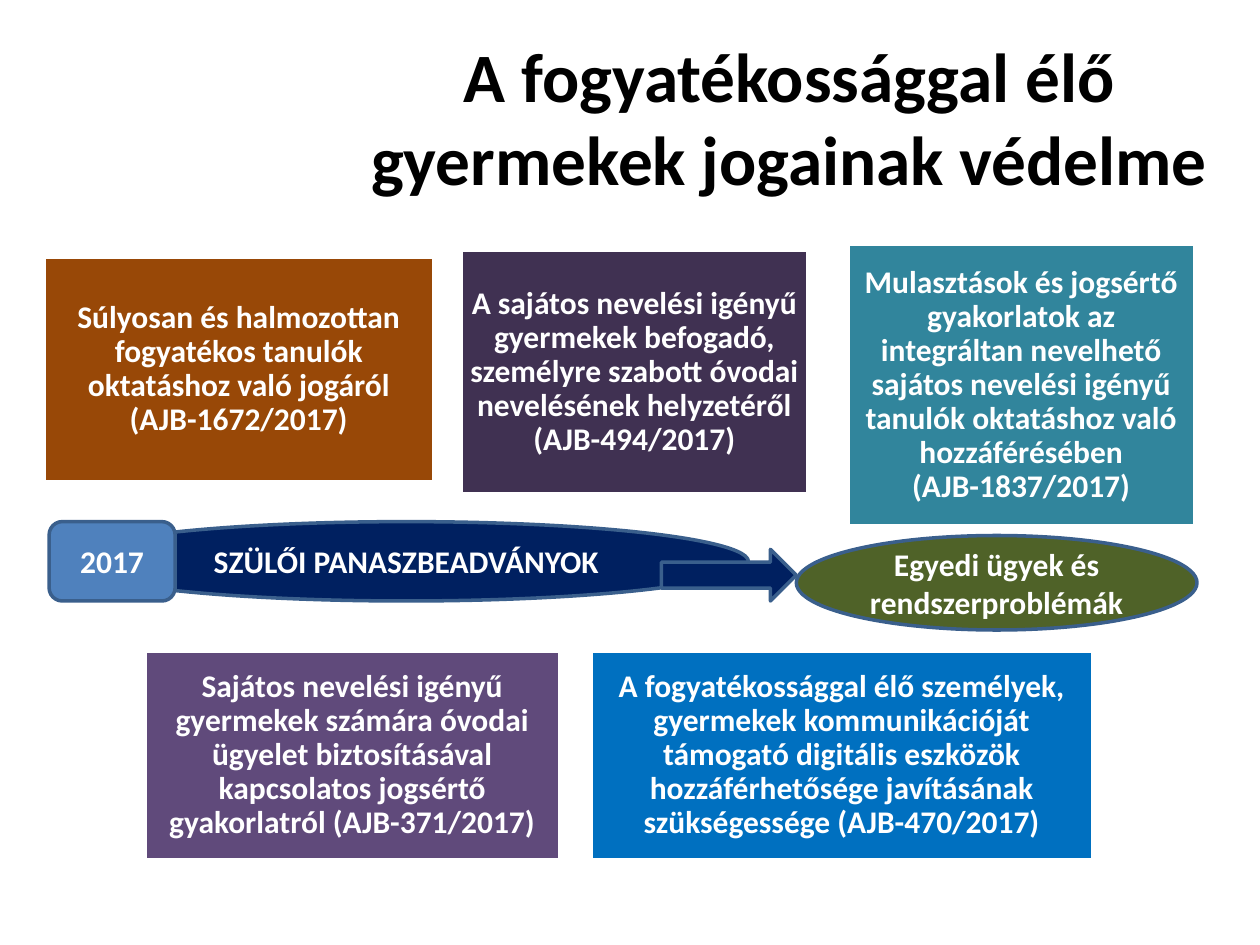
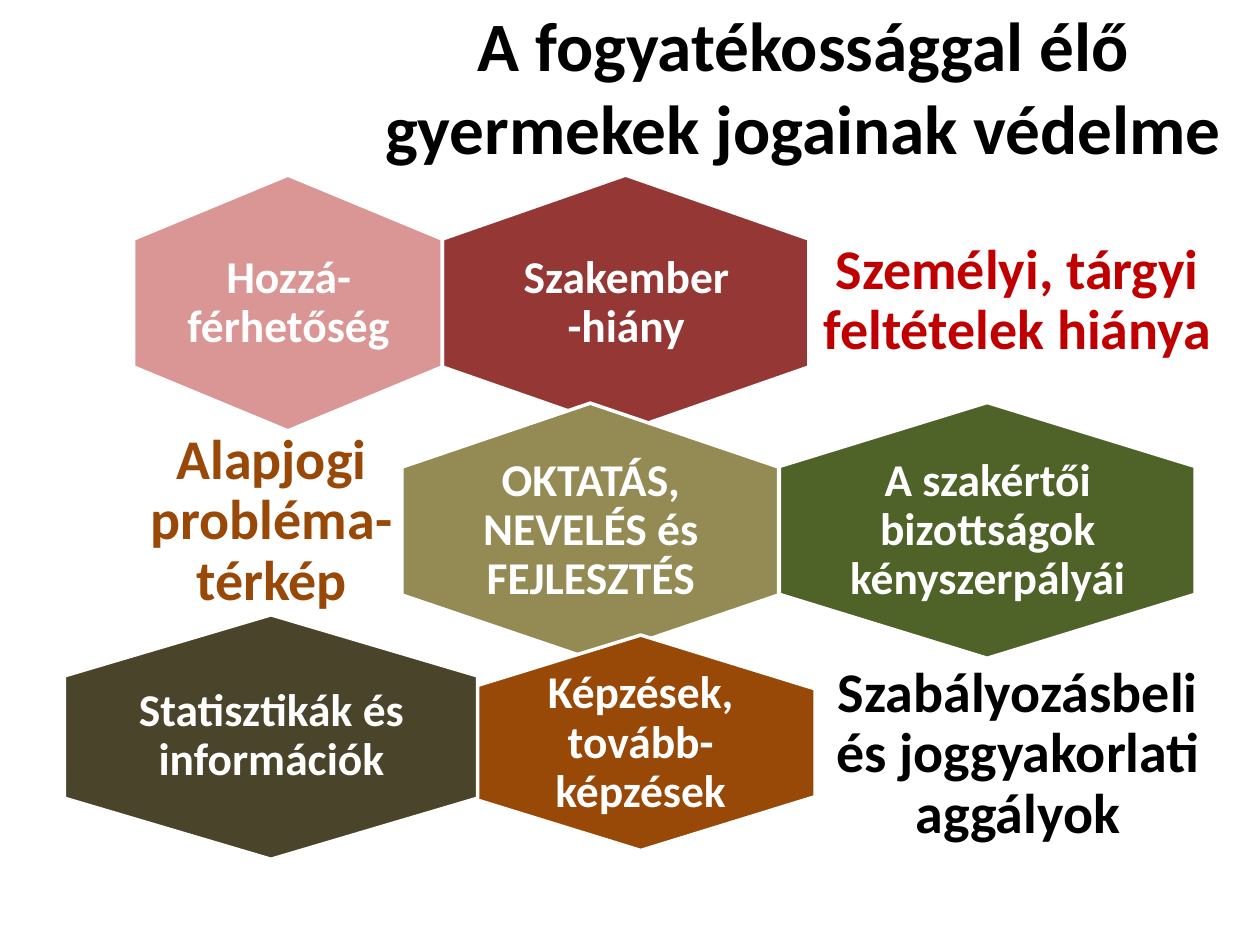
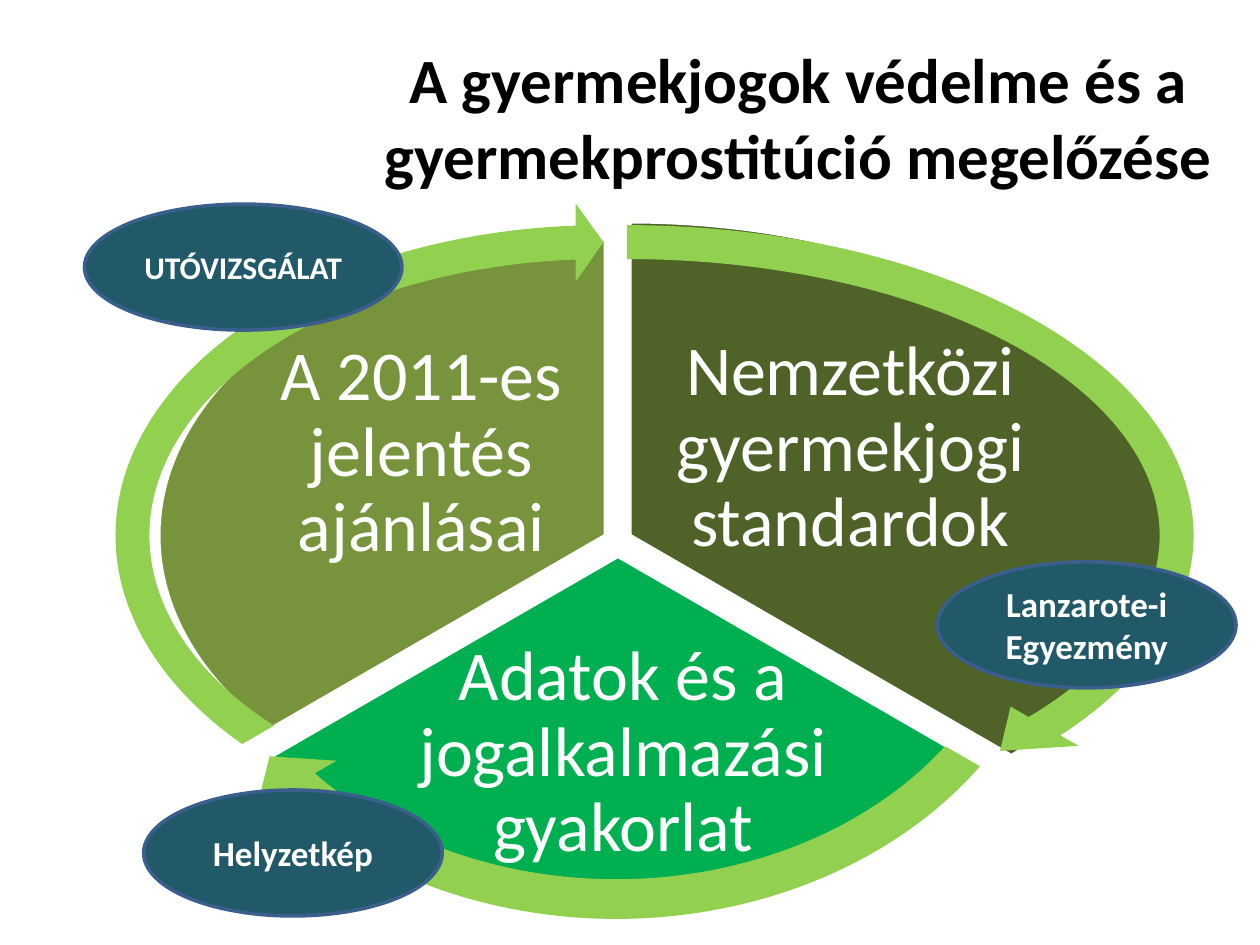
from dataclasses import dataclass
from typing import Optional

from pptx import Presentation
from pptx.dml.color import RGBColor
from pptx.enum.shapes import MSO_SHAPE as Preset
from pptx.enum.text import MSO_ANCHOR as Anchor, PP_ALIGN as Align
from pptx.util import Inches, Pt

FONT = "Calibri"
WHITE = "FFFFFF"
BLACK = "000000"
OUTLINE = "3A5F8C"
NAVY = "002060"
OLIVE = "4F6228"
BROWN = "984807"
TEAL = "215968"
LIME = "92D050"
DEFAULT_INSETS = (0.1, 0.05)
CARD_INSETS = (0.07, 0.07)
HEXAGON_INSETS = (0.11, 0.11)
NO_INSETS = (0, 0)
CAPTION_INSETS = (0.13, 0.13)
SECTOR_INSETS = (0.06, 0.06)


@dataclass(frozen=True)
class Box:
    left: float
    top: float
    width: float
    height: float


@dataclass(frozen=True)
class Label:
    text: str
    size: float = 18
    color: str = WHITE
    bold: bool = True
    insets: tuple[float, float] = DEFAULT_INSETS
    spacing: float = 1.0


@dataclass(frozen=True)
class Figure:
    preset: Preset
    box: Box
    fill: str
    line: Optional[str] = WHITE
    label: Optional[Label] = None
    adjustments: tuple[float, ...] = ()
    rotation: float = 0


@dataclass(frozen=True)
class Caption:
    box: Box
    label: Label


def rgb(color: str) -> RGBColor:
    return RGBColor.from_string(color)


def place(box: Box) -> tuple:
    return Inches(box.left), Inches(box.top), Inches(box.width), Inches(box.height)


def write(text_frame, label: Label) -> None:
    text_frame.word_wrap = True
    text_frame.vertical_anchor = Anchor.MIDDLE
    horizontal, vertical = label.insets
    text_frame.margin_left = text_frame.margin_right = Inches(horizontal)
    text_frame.margin_top = text_frame.margin_bottom = Inches(vertical)
    text_frame.text = label.text
    for paragraph in text_frame.paragraphs:
        paragraph.alignment = Align.CENTER
        paragraph.line_spacing = label.spacing
        for run in paragraph.runs:
            run.font.name = FONT
            run.font.size = Pt(label.size)
            run.font.bold = label.bold
            run.font.color.rgb = rgb(label.color)


def draw_caption(slide, caption: Caption) -> None:
    write(slide.shapes.add_textbox(*place(caption.box)).text_frame, caption.label)


def draw_figure(slide, figure: Figure) -> None:
    shape = slide.shapes.add_shape(figure.preset, *place(figure.box))
    shape.shadow.inherit = False
    shape.rotation = figure.rotation
    shape.fill.solid()
    shape.fill.fore_color.rgb = rgb(figure.fill)
    if figure.line:
        shape.line.color.rgb = rgb(figure.line)
        shape.line.width = Pt(2)
    else:
        shape.line.fill.background()
    for index, value in enumerate(figure.adjustments):
        shape.adjustments[index] = value
    if figure.label:
        write(shape.text_frame, figure.label)


def title(box: Box, text: str, size: float) -> Caption:
    return Caption(box, Label(text, size, BLACK))


def card(box: Box, fill: str, text: str) -> Figure:
    return Figure(Preset.RECTANGLE, box, fill,
                  label=Label(text, insets=CARD_INSETS, spacing=0.9))


def ellipse(box: Box, fill: str, text: str, size: float = 18) -> Figure:
    return Figure(Preset.OVAL, box, fill, OUTLINE, Label(text, size))


def hexagon(box: Box, fill: str) -> Figure:
    return Figure(Preset.HEXAGON, box, fill, rotation=90)


def hexagon_text(box: Box, text: str, insets: tuple[float, float]) -> Caption:
    return Caption(box, Label(text, 26, insets=insets, spacing=0.9))


def side_text(box: Box, text: str, color: str) -> Caption:
    return Caption(box, Label(text, 32, color, insets=CAPTION_INSETS, spacing=0.9))


def sector(box: Box, fill: str, start: float, end: float) -> Figure:
    return Figure(Preset.PIE, box, fill, adjustments=(start, end))


def sector_text(box: Box, text: str) -> Caption:
    return Caption(box, Label(text, 40, bold=False, insets=SECTOR_INSETS, spacing=0.9))


def cycle_arrow(box: Box, end: float, start: float) -> Figure:
    return Figure(Preset.CIRCULAR_ARROW, box, LIME, None,
                  adjustments=(0.051, 3.275, end, start, 0.059))


DISABILITY_TITLE = "A fogyatékossággal élő gyermekek jogainak védelme"

COMPLAINTS = [
    title(Box(2.8, 0.3, 6.93, 1.25), DISABILITY_TITLE, 39.6),
    card(Box(0.35, 2.04, 3.09, 1.78), BROWN,
         "Súlyosan és halmozottan fogyatékos tanulók oktatáshoz való jogáról "
         "(AJB-1672/2017)"),
    card(Box(3.66, 1.99, 2.75, 1.93), "403152",
         "A sajátos nevelési igényű gyermekek befogadó, személyre szabott óvodai "
         "nevelésének helyzetéről (AJB-494/2017)"),
    card(Box(6.73, 1.94, 2.75, 2.23), "31859C",
         "Mulasztások és jogsértő gyakorlatok az integráltan nevelhető sajátos "
         "nevelési igényű tanulók oktatáshoz való hozzáférésében (AJB-1837/2017)"),
    card(Box(1.15, 5.17, 3.29, 1.65), "604A7B",
         "Sajátos nevelési igényű gyermekek számára óvodai ügyelet biztosításával "
         "kapcsolatos jogsértő gyakorlatról (AJB-371/2017)"),
    card(Box(4.69, 5.17, 3.98, 1.65), "0070C0",
         "A fogyatékossággal élő személyek, gyermekek kommunikációját támogató "
         "digitális eszközök hozzáférhetősége javításának szükségessége "
         "(AJB-470/2017)"),
    ellipse(Box(0.51, 4.14, 5.43, 0.63), NAVY, "SZÜLŐI PANASZBEADVÁNYOK"),
    Figure(Preset.RIGHT_ARROW, Box(5.25, 4.36, 1.07, 0.41), NAVY, OUTLINE),
    ellipse(Box(6.32, 4.25, 3.18, 0.75), OLIVE, "Egyedi ügyek és rendszerproblémák"),
    Figure(Preset.ROUNDED_RECTANGLE, Box(0.39, 4.14, 1, 0.63), "4F81BD", OUTLINE,
           Label("2017")),
]

PROBLEM_MAP = [
    title(Box(2.87, 0.13, 7.01, 1.1), DISABILITY_TITLE, 39.6),
    hexagon(Box(3.95, 0.95, 2.03, 2.91), "953735"),
    hexagon_text(Box(4, 1.73, 1.94, 1.35), "Szakember-hiány", HEXAGON_INSETS),
    side_text(Box(6.35, 1.78, 3.45, 1.22), "Személyi, tárgyi feltételek hiánya", "C00000"),
    hexagon(Box(1.27, 1.18, 2.03, 2.45), "D99694"),
    hexagon_text(Box(1.47, 1.73, 1.64, 1.35), "Hozzá-férhetőség", NO_INSETS),
    hexagon(Box(3.67, 2.72, 2.03, 2.99), "948A54"),
    hexagon_text(Box(3.69, 3.54, 2, 1.35), "OKTATÁS, NEVELÉS és FEJLESZTÉS", HEXAGON_INSETS),
    side_text(Box(1.06, 3.28, 2.19, 1.72), "Alapjogi probléma-térkép", BROWN),
    hexagon(Box(6.82, 2.56, 2.03, 3.3), OLIVE),
    hexagon_text(Box(6.74, 3.54, 2.2, 1.35), "A szakértői bizottságok kényszerpályái",
                 NO_INSETS),
    hexagon(Box(4.23, 4.51, 1.71, 2.77), BROWN),
    hexagon_text(Box(4.16, 5.33, 1.85, 1.14), "Képzések, tovább-képzések", HEXAGON_INSETS),
    side_text(Box(6.43, 5.17, 3.3, 1.64), "Szabályozásbeli és joggyakorlati aggályok", BLACK),
    hexagon(Box(1.18, 4.21, 1.94, 3.28), "4A452A"),
    hexagon_text(Box(1.06, 5.2, 2.19, 1.29), "Statisztikák és információk", NO_INSETS),
]

PREVENTION_CYCLE = [
    title(Box(2.87, 0.3, 6.93, 1.25),
          "A gyermekjogok védelme és a gyermekprostitúció megelőzése", 36),
    sector(Box(0.75, 1.76, 8.5, 4.98), OLIVE, 162, 18),
    sector_text(Box(5.23, 2.82, 3.04, 1.48), "Nemzetközi gyermekjogi standardok"),
    sector(Box(1.5, 1.62, 6.81, 5.59), "00B050", 18, 90),
    sector_text(Box(3.12, 5.25, 3.65, 1.46), "Adatok és a jogalkalmazási gyakorlat"),
    sector(Box(1.26, 1.9, 7.09, 4.7), "77933C", 90, 162),
    sector_text(Box(2.08, 2.9, 2.53, 1.4), "A 2011-es jelentés ajánlásai"),
    cycle_arrow(Box(0.3, 1.61, 9.35, 5.28), 14.725, 162),
    cycle_arrow(Box(1.14, 1.33, 7.5, 6.17), 86.72, 18),
    cycle_arrow(Box(0.74, 1.61, 8.1, 5.28), 158.73, 90),
    ellipse(Box(0.67, 1.62, 2.52, 1), TEAL, "UTÓVIZSGÁLAT"),
    ellipse(Box(7.44, 4.46, 2.37, 1), TEAL, "Lanzarote-i Egyezmény", 20),
    ellipse(Box(1.14, 6.27, 2.37, 1), TEAL, "Helyzetkép", 20),
]


def main() -> None:
    presentation = Presentation()
    presentation.slide_width = Inches(10)
    presentation.slide_height = Inches(7.5)
    for elements in (COMPLAINTS, PROBLEM_MAP, PREVENTION_CYCLE):
        slide = presentation.slides.add_slide(presentation.slide_layouts[6])
        for element in elements:
            if isinstance(element, Figure):
                draw_figure(slide, element)
            else:
                draw_caption(slide, element)
    presentation.save("out.pptx")


if __name__ == "__main__":
    main()
